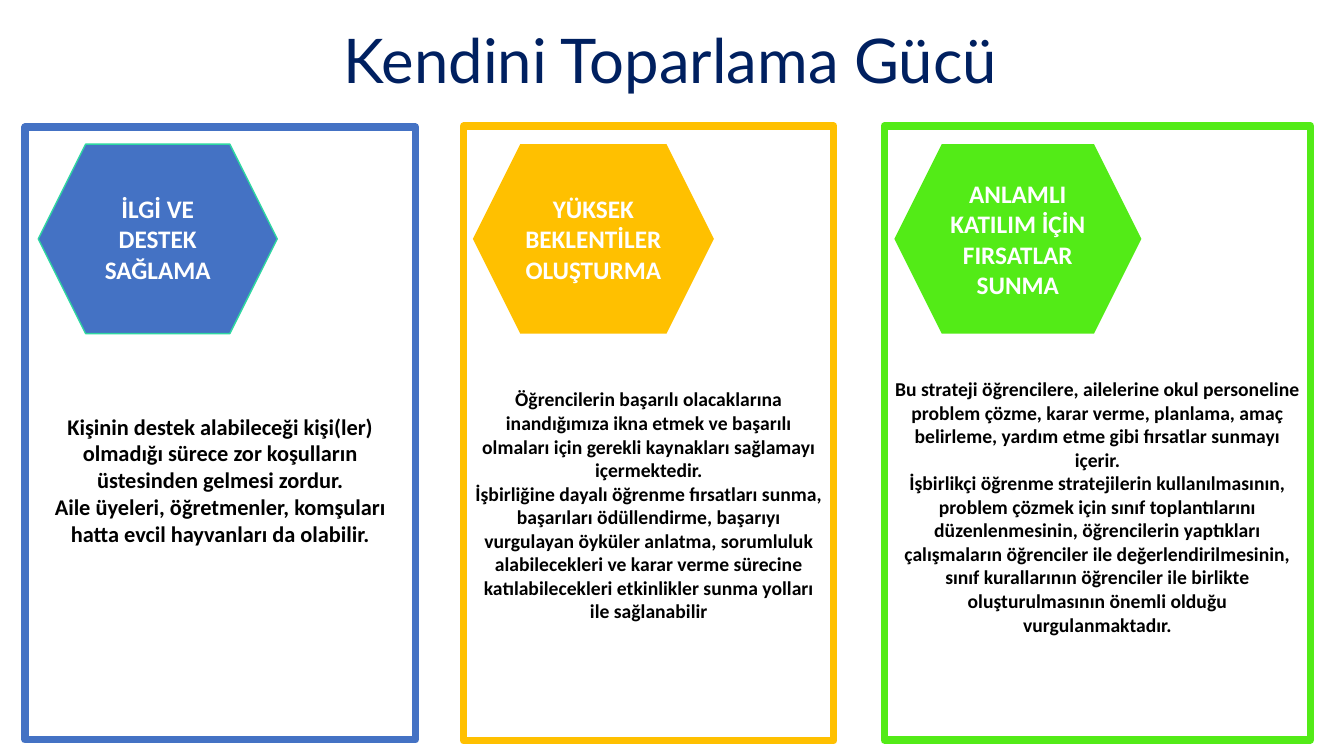
from pptx import Presentation
from pptx.dml import color
from pptx.enum import shapes, text
from pptx.util import Inches, Pt

COLUMNS = [
    dict(hexagon=(0.38, 1.43, 2.37, 1.88), frame=(0.25, 1.26, 3.87, 6.08),
         hue="4472C4", edge="2ED7A1", size=16, top=0.97,
         heading="İLGİ VE DESTEK SAĞLAMA",
         body=["Kişinin destek alabileceği kişi(ler) olmadığı sürece zor koşulların "
               "üstesinden gelmesi zordur.",
               "Aile üyeleri, öğretmenler, komşuları hatta evcil hayvanları da olabilir."]),
    dict(hexagon=(4.69, 1.43, 2.39, 1.88), frame=(4.6, 1.25, 3.67, 6.1),
         hue="FFC000", edge=None, size=14, top=1.47,
         heading="YÜKSEK BEKLENTİLER OLUŞTURMA",
         body=["Öğrencilerin başarılı olacaklarına inandığımıza ikna etmek ve başarılı "
               "olmaları için gerekli kaynakları sağlamayı içermektedir.",
               "İşbirliğine dayalı öğrenme fırsatları sunma, başarıları ödüllendirme, "
               "başarıyı vurgulayan öyküler anlatma, sorumluluk alabilecekleri ve karar "
               "verme sürecine katılabilecekleri etkinlikler sunma yolları ile sağlanabilir"]),
    dict(hexagon=(8.87, 1.43, 2.45, 1.88), frame=(8.77, 1.25, 4.23, 6.09),
         hue="53EB17", edge=None, size=14, top=1.51,
         heading="ANLAMLI KATILIM İÇİN FIRSATLAR SUNMA",
         body=["Bu strateji öğrencilere, ailelerine okul personeline problem çözme, karar "
               "verme, planlama, amaç belirleme, yardım etme gibi fırsatlar sunmayı içerir.",
               "İşbirlikçi öğrenme stratejilerin kullanılmasının, problem çözmek için sınıf "
               "toplantılarını düzenlenmesinin, öğrencilerin yaptıkları çalışmaların "
               "öğrenciler ile değerlendirilmesinin, sınıf kurallarının öğrenciler ile "
               "birlikte oluşturulmasının önemli olduğu vurgulanmaktadır."]),
]


def rgb(value):
    """Turn a hex string into a colour."""
    return color.RGBColor.from_string(value)


def write(tf, lines, size, hue, font="Calibri", bold=True):
    """Fill a text frame with centred paragraphs."""
    tf.word_wrap = True
    for i, line in enumerate(lines):
        p = tf.add_paragraph() if i else tf.paragraphs[0]
        p.alignment = text.PP_ALIGN.CENTER
        r = p.add_run()
        r.text = line
        r.font.name, r.font.size, r.font.bold = font, Pt(size), bold
        r.font.color.rgb = rgb(hue)


def add_title(s, words):
    """Add the slide heading."""
    box = s.shapes.add_textbox(*map(Inches, (3.21, 0.17, 6.88, 0.84)))
    write(box.text_frame, [words], 44, "002060", "Lato", False)


def add_panel(s, kind, box, fill=None, edge=None, width=1):
    """Add a shape with optional fill and outline and middle-anchored text."""
    sp = s.shapes.add_shape(kind, *map(Inches, box))
    sp.shadow.inherit = False
    if fill:
        sp.fill.solid()
        sp.fill.fore_color.rgb = rgb(fill)
    else:
        sp.fill.background()
    if edge:
        sp.line.color.rgb = rgb(edge)
        sp.line.width = Pt(width)
    else:
        sp.line.fill.background()
    sp.text_frame.vertical_anchor = text.MSO_ANCHOR.MIDDLE
    return sp.text_frame


def add_column(s, column):
    """Add a hexagon heading and the framed text under it."""
    hue = column["hue"]
    tf = add_panel(s, shapes.MSO_SHAPE.HEXAGON, column["hexagon"], hue, column["edge"])
    write(tf, [column["heading"]], 18, "FFFFFF")
    tf = add_panel(s, shapes.MSO_SHAPE.RECTANGLE, column["frame"], edge=hue, width=5.25)
    tf.margin_top = Inches(column["top"])
    write(tf, column["body"], column["size"], "000000")


def main():
    """Build the slide and save it."""
    prs = Presentation()
    prs.slide_width, prs.slide_height = Inches(13.33), Inches(7.5)
    s = prs.slides.add_slide(prs.slide_layouts[6])
    add_title(s, "Kendini Toparlama Gücü")
    for column in COLUMNS:
        add_column(s, column)
    prs.save("out.pptx")


if __name__ == "__main__":
    main()
